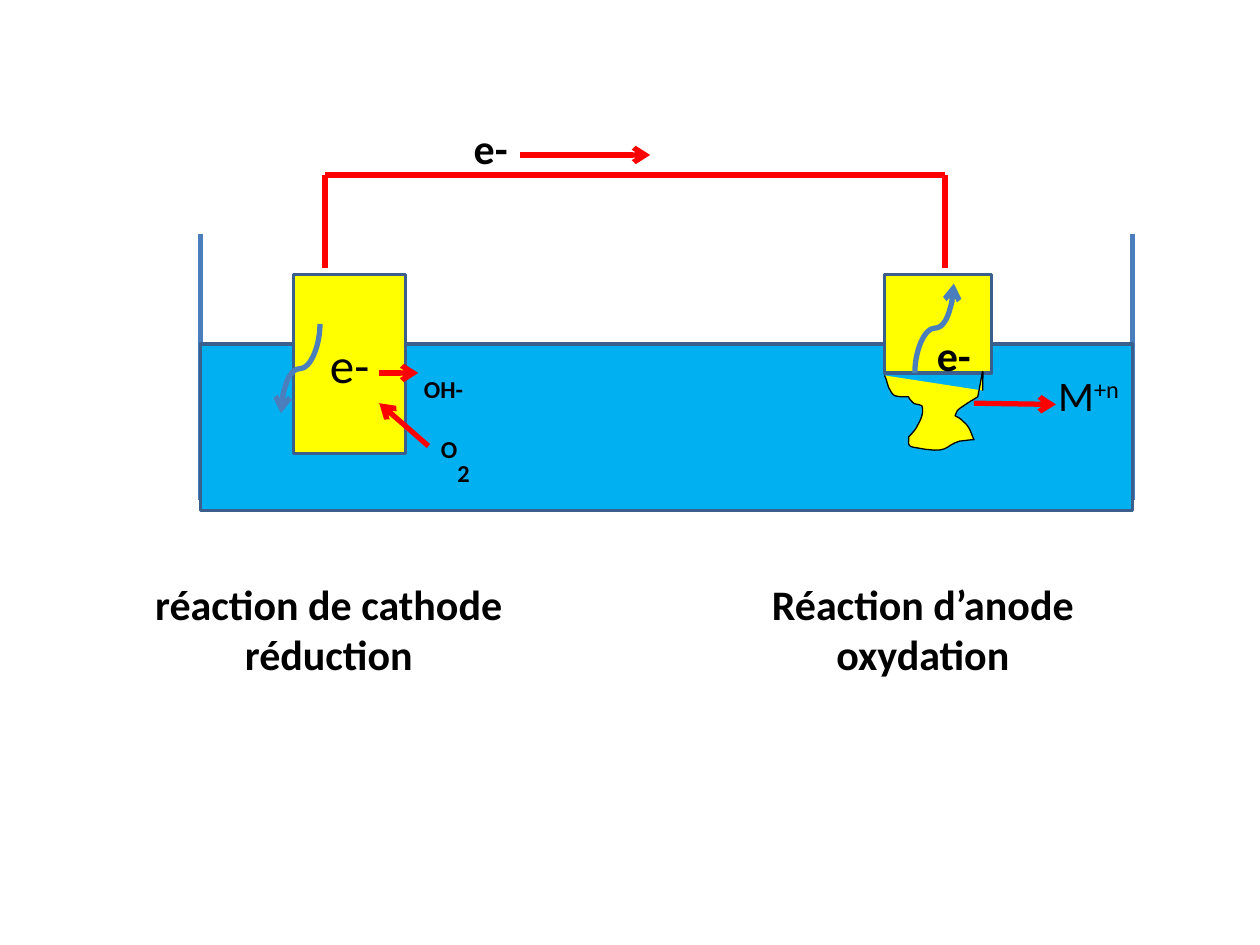
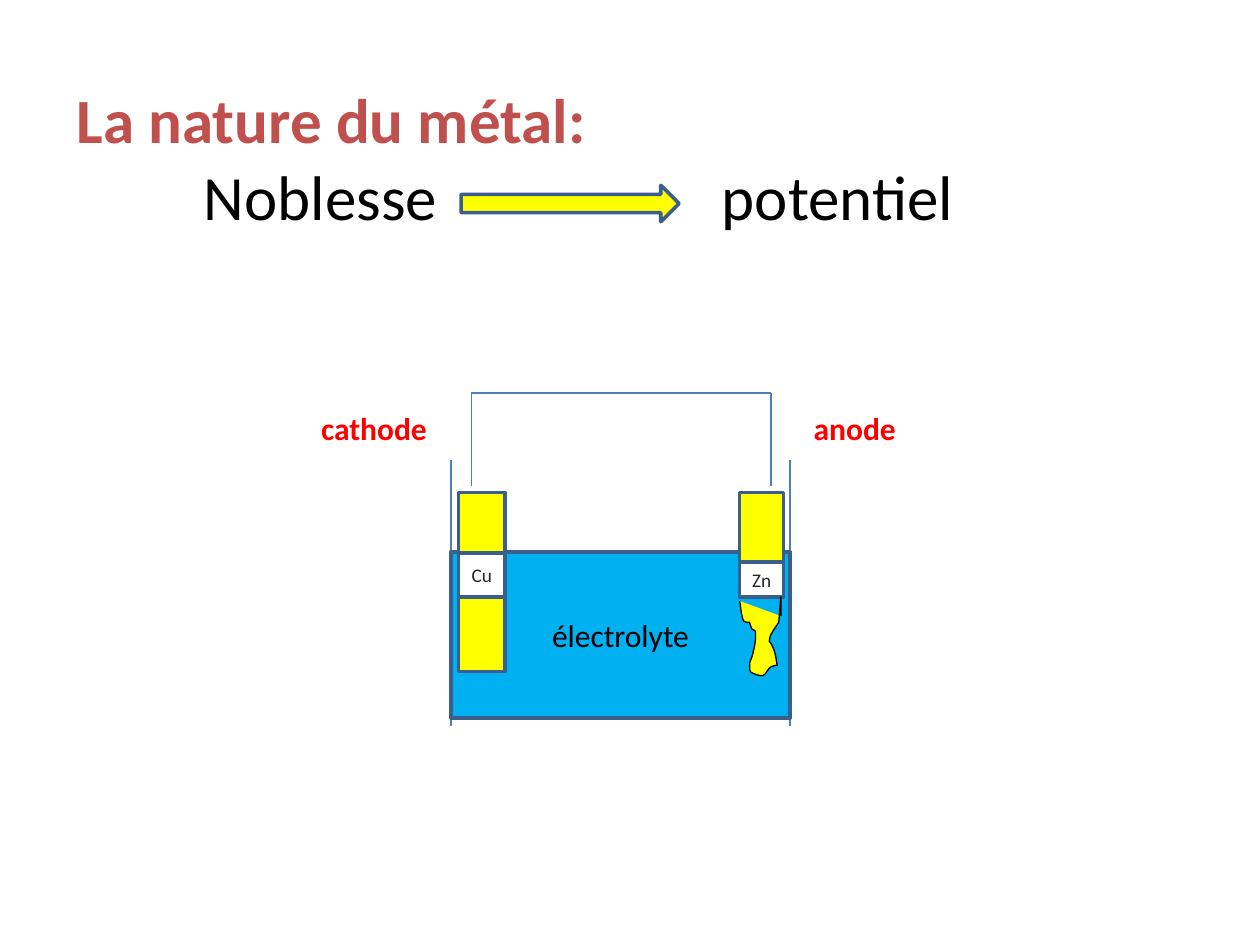
from dataclasses import dataclass

from lxml.etree import SubElement
from pptx import Presentation
from pptx.dml.color import RGBColor
from pptx.enum.shapes import MSO_CONNECTOR as Link, MSO_SHAPE as Shape
from pptx.enum.text import MSO_ANCHOR as Anchor, MSO_AUTO_SIZE as AutoSize, PP_ALIGN as Align
from pptx.oxml.ns import qn
from pptx.util import Inches, Pt


@dataclass(frozen=True)
class Theme:
    font: str = "Calibri"
    black: str = "000000"
    label: str = "262626"
    white: str = "FFFFFF"
    heading: str = "C0504D"
    red: str = "FF0000"
    metal: str = "FFFF00"
    liquid: str = "00B0F0"
    outline: str = "3A5F8C"
    blue: str = "4B7EBC"
    title_size: float = 36
    electron_size: float = 28
    body_size: float = 24
    small_size: float = 18
    symbol_size: float = 11


theme = Theme()


def put_text(frame, *paras, size=theme.body_size, color=theme.black, bold=False,
             align=Align.CENTER, anchor=Anchor.TOP, wrap=False):
    """Fill a text frame; a paragraph is a string or a list of (text, baseline percent)."""
    frame.word_wrap = wrap
    frame.auto_size = AutoSize.NONE
    frame.vertical_anchor = anchor
    for index, content in enumerate(paras):
        para = frame.paragraphs[0] if index == 0 else frame.add_paragraph()
        para.alignment = align
        for words, baseline in [(content, 0)] if isinstance(content, str) else content:
            span = para.add_run()
            span.text = words
            span.font.name = theme.font
            span.font.size = Pt(size)
            span.font.bold = bold
            span.font.color.rgb = RGBColor.from_string(color)
            if baseline:
                span.font._element.set("baseline", str(baseline * 1000))


def add_line(page, start, end, color=theme.blue, width=3, arrow=False, rotation=None):
    """Draw a straight line, or a curve turned by the given degrees."""
    kind = Link.STRAIGHT if rotation is None else Link.CURVE
    line = page.shapes.add_connector(kind, *map(Inches, (*start, *end)))
    line.line.color.rgb = RGBColor.from_string(color)
    line.line.width = Pt(width)
    properties = line.element.spPr
    if rotation is not None:
        properties.find(qn("a:xfrm")).set("rot", str(rotation * 60000))
    if arrow:
        SubElement(properties.find(qn("a:ln")), qn("a:tailEnd"), type="arrow")
    SubElement(properties, qn("a:effectLst"))


deck = Presentation()
deck.slide_width, deck.slide_height = Inches(10), Inches(7.5)
reaction_page = deck.slides.add_slide(deck.slide_layouts[6])
metal_page = deck.slides.add_slide(deck.slide_layouts[5])

title = metal_page.shapes.title
title.left, title.top, title.width, title.height = map(Inches, (0.51, 0.59, 8.9, 0.71))
put_text(title.text_frame, "La nature du métal:", size=theme.title_size,
         color=theme.heading, bold=True, align=Align.LEFT, wrap=True)

# Corroded anode: start point, then cubic segments, in hundredths of an inch
corrosion_start = (0, 0)
corrosion_curves = [
    ((2, 4), (2, 7), (4, 11)), ((5, 12), (5, 14), (8, 16)),
    ((11, 17), (15, 17), (19, 17)), ((20, 19), (21, 20), (23, 22)),
    ((24, 23), (30, 23), (30, 25)), ((31, 30), (29, 35), (26, 40)),
    ((25, 43), (19, 49), (19, 49)), ((20, 52), (17, 56), (23, 57)),
    ((53, 63), (46, 56), (60, 52)), ((63, 52), (67, 51), (71, 51)),
    ((69, 47), (68, 41), (63, 37)), ((61, 35), (60, 34), (56, 32)),
    ((57, 30), (57, 28), (60, 26)), ((64, 23), (74, 17), (74, 17)),
    ((79, -8), (78, -10), (78, 12)),
]
steps = 8
corrosion = [corrosion_start]
for first, second, last in corrosion_curves:
    origin = corrosion[-1]
    for step in range(1, steps + 1):
        t = step / steps
        corrosion.append(tuple(
            (1 - t) ** 3 * a + 3 * (1 - t) ** 2 * t * b + 3 * (1 - t) * t ** 2 * c + t ** 3 * d
            for a, b, c, d in zip(origin, first, second, last)))

# Each cell: tank, electrodes and wire; extra plates carry the metal symbols
cells = [
    dict(page=reaction_page, tank=(1.59, 2.73, 7.4), wall_top=1.86, wall_width=3,
         cathode=(2.33, 2.18, 0.89), anode=(7.02, 2.18, 0.85),
         wire=(2.58, 7.5, 1.39), wire_color=theme.red, wire_width=3,
         corroded=(7.02, 2.98, 1), electrolyte="", electron="e-", plates=[]),
    dict(page=metal_page, tank=(3.58, 4.38, 2.69), wall_top=3.65, wall_width=1,
         cathode=(3.64, 3.91, 0.37), anode=(5.87, 3.91, 0.35),
         wire=(3.74, 6.12, 3.12), wire_color=theme.blue, wire_width=0.75,
         corroded=(5.87, 4.77, 0.42), electrolyte="électrolyte", electron="",
         plates=[("Zn", (5.87, 4.46, 0.35, 0.28)), ("Cu", (3.64, 4.39, 0.37, 0.35))]),
]
tank_height, wall_height = 1.32, 2.11
cathode_height, anode_height, wire_drop = 1.42, 0.78, 0.74

for cell in cells:
    page = cell["page"]
    left, top, width = cell["tank"]
    for x in (left, left + width):
        add_line(page, (x, cell["wall_top"]), (x, cell["wall_top"] + wall_height),
                 width=cell["wall_width"])

    blocks = [
        (Shape.FLOWCHART_PROCESS, (*cell["tank"], tank_height), theme.liquid,
         cell["electrolyte"], theme.small_size, theme.black),
        (Shape.RECTANGLE, (*cell["cathode"], cathode_height), theme.metal,
         cell["electron"], theme.electron_size, theme.black),
        (Shape.RECTANGLE, (*cell["anode"], anode_height), theme.metal, "", 0, ""),
    ]
    for symbol, place in cell["plates"]:
        blocks.append((Shape.RECTANGLE, place, theme.white, symbol,
                       theme.symbol_size, theme.label))
    if page is metal_page:
        blocks.append((Shape.RIGHT_ARROW, (3.66, 1.47, 1.73, 0.29), theme.metal, "", 0, ""))
    for kind, place, fill, words, size, color in blocks:
        block = page.shapes.add_shape(kind, *map(Inches, place))
        block.shadow.inherit = False
        block.fill.solid()
        block.fill.fore_color.rgb = RGBColor.from_string(fill)
        block.line.color.rgb = RGBColor.from_string(theme.outline)
        block.line.width = Pt(2)
        if words:
            put_text(block.text_frame, words, size=size, color=color, anchor=Anchor.MIDDLE)

    wire_left, wire_right, wire_top = cell["wire"]
    wire_style = dict(color=cell["wire_color"], width=cell["wire_width"])
    add_line(page, (wire_left, wire_top), (wire_right, wire_top), **wire_style)
    for x in (wire_left, wire_right):
        add_line(page, (x, wire_top), (x, wire_top + wire_drop), **wire_style)

    left, top, stretch = cell["corroded"]
    outline = [(Inches(left + x * stretch / 100), Inches(top + y / 100)) for x, y in corrosion]
    builder = page.shapes.build_freeform(*outline[0])
    builder.add_line_segments(outline[1:], close=False)
    remnant = builder.convert_to_shape()
    remnant.shadow.inherit = False
    remnant.fill.solid()
    remnant.fill.fore_color.rgb = RGBColor.from_string(theme.metal)
    remnant.line.color.rgb = RGBColor.from_string(theme.black)
    remnant.line.width = Pt(0.75)

# Electron paths and ion movements
for start, end, rotation in [((7.77, 2.76), (7.06, 2.45), 90),
                             ((2.74, 3.08), (2.03, 2.77), 270)]:
    add_line(reaction_page, start, end, arrow=True, rotation=rotation)
for start, end in [((4.13, 1.23), (5.16, 1.23)), ((7.73, 3.2), (8.38, 3.21)),
                   ((3.01, 2.96), (3.32, 2.96)), ((3.4, 3.54), (3.01, 3.2))]:
    add_line(reaction_page, start, end, color=theme.red, arrow=True)

strong = dict(bold=True)
electrode_name = dict(size=theme.small_size, color=theme.red, bold=True, align=Align.LEFT)
property_name = dict(size=theme.title_size, align=Align.LEFT)
labels = [
    (reaction_page, (3.66, 0.92, 0.47, 0.5), ["e-"], strong),
    (reaction_page, (7.33, 2.57, 0.48, 0.5), ["e-"], strong),
    (reaction_page, (8.28, 2.88, 0.72, 0.5), [[("M", 0), ("+n", 30)]], {}),
    (reaction_page, (3.4, 3.36, 0.52, 0.37), [[("O", 30), ("2", -25)]],
     dict(bold=True, align=Align.LEFT)),
    (reaction_page, (3.24, 2.88, 0.56, 0.37), [[("OH-", 30)]], strong),
    (reaction_page, (1.08, 4.54, 3.06, 0.91), ["réaction de cathode", "réduction"], strong),
    (reaction_page, (6.01, 4.54, 2.63, 0.91), ["Réaction d’anode", "oxydation"], strong),
    (metal_page, (1.52, 1.2, 2.05, 0.71), ["Noblesse"], property_name),
    (metal_page, (5.63, 1.2, 2.05, 0.71), ["potentiel"], property_name),
    (metal_page, (2.45, 3.2, 1.05, 0.4), ["cathode"], electrode_name),
    (metal_page, (6.36, 3.2, 0.87, 0.4), ["anode"], electrode_name),
]
for page, place, paras, style in labels:
    box = page.shapes.add_textbox(*map(Inches, place))
    put_text(box.text_frame, *paras, **style)

deck.save("out.pptx")
